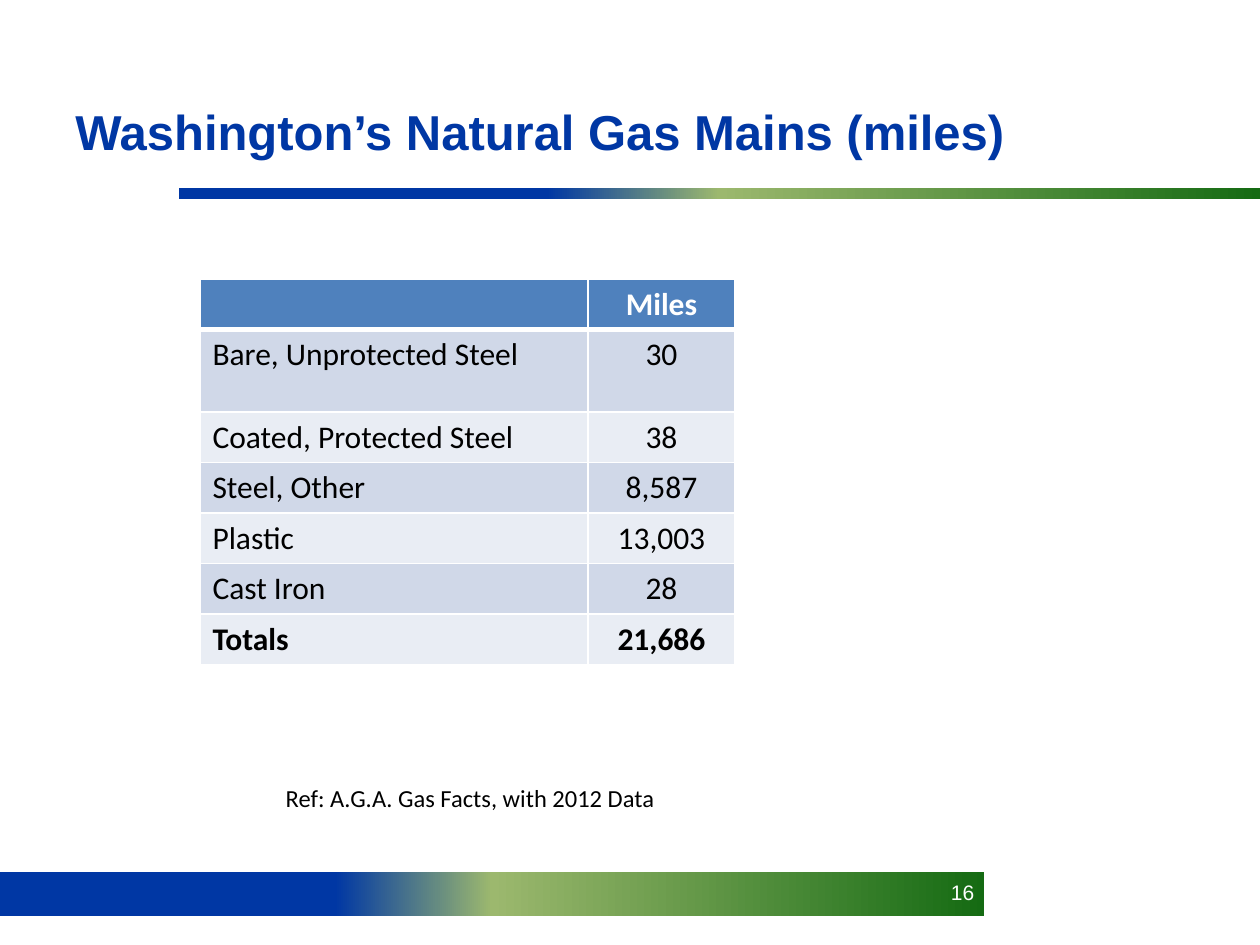
from copy import deepcopy

from lxml.etree import SubElement
from pptx import Presentation
from pptx.dml.color import RGBColor as Color
from pptx.enum.shapes import MSO_SHAPE as Shape
from pptx.enum.text import MSO_ANCHOR as Anchor, PP_ALIGN as Align
from pptx.oxml.ns import qn
from pptx.util import Cm, Pt

TITLE = "Washington’s Natural Gas Mains (miles)"
REFERENCE = "Ref: A.G.A. Gas Facts, with 2012 Data"
PAGE_NUMBER = "16"
MAINS = [
    ("", "Miles"),
    ("Bare, Unprotected Steel", "30"),
    ("Coated, Protected Steel", "38"),
    ("Steel, Other", "8,587"),
    ("Plastic", "13,003"),
    ("Cast Iron", "28"),
    ("Totals", "21,686"),
]

THEME = {
    "blue": "0037A4",
    "black": "000000",
    "white": "FFFFFF",
    "header": "4F81BD",
    "bands": ("D0D8E8", "E9EDF4"),
    "gradient": ((0.34, "0037A4"), (0.5, "9CB86E"), (1, "156B13")),
    "heading_font": "Arial",
    "body_font": "Calibri",
    "title_size": 28,
    "table_size": 18,
    "reference_size": 14,
    "number_size": 12,
}

SLIDE_SIZE = (25.4, 19.05)
BARS = [(0, 17.58, 19.84, 0.88), (3.61, 3.8, 21.79, 0.22)]
TITLE_BOX = (1.27, 1.32, 22.86, 2.62)
NUMBER_BOX = (13.97, 17.6, 5.92, 1.07)
REFERENCE_BOX = (5.51, 15.67, 8.13, 0.86)
TABLE_ORIGIN = (4.03, 5.62)
COLUMN_WIDTHS = (7.82, 2.97)
ROW_HEIGHT, TALL_ROW_HEIGHT, TALL_ROW = 1.0, 1.67, 1
THIN, THICK = 1, 3


def place(box):
    return [Cm(value) for value in box]


def style_text(text_frame, text, font, size, color, bold=False, align=Align.LEFT):
    text_frame.text = text
    paragraph = text_frame.paragraphs[0]
    paragraph.alignment = align
    for styled in [paragraph, *paragraph.runs]:
        styled.font.name = THEME[font]
        styled.font.size = Pt(THEME[size])
        styled.font.bold = bold
        styled.font.color.rgb = Color.from_string(THEME[color])


def add_text(slide, box, *style, anchor=Anchor.TOP, wrap=True, **options):
    text_frame = slide.shapes.add_textbox(*place(box)).text_frame
    text_frame.word_wrap = wrap
    text_frame.vertical_anchor = anchor
    style_text(text_frame, *style, **options)


def add_gradient_bar(slide, box):
    shape = slide.shapes.add_shape(Shape.RECTANGLE, *place(box))
    shape.shadow.inherit = False
    shape.line.fill.background()
    shape.fill.gradient()
    shape.fill.gradient_angle = 0
    stop_list = shape.element.spPr.find(qn("a:gradFill")).find(qn("a:gsLst"))
    stop_list.append(deepcopy(stop_list[-1]))
    for stop, (position, color) in zip(shape.fill.gradient_stops, THEME["gradient"]):
        stop.position = position
        stop.color.rgb = Color.from_string(color)


def set_borders(cell, top, bottom):
    properties = cell._tc.get_or_add_tcPr()
    for side, width in (("L", THIN), ("R", THIN), ("T", top), ("B", bottom)):
        line = SubElement(properties, qn(f"a:ln{side}"), w=str(Pt(width)))
        fill = SubElement(line, qn("a:solidFill"))
        SubElement(fill, qn("a:srgbClr"), val=THEME["white"])


def add_mains_table(slide):
    heights = [TALL_ROW_HEIGHT if i == TALL_ROW else ROW_HEIGHT for i in range(len(MAINS))]
    box = (*TABLE_ORIGIN, sum(COLUMN_WIDTHS), sum(heights))
    table = slide.shapes.add_table(len(MAINS), len(COLUMN_WIDTHS), *place(box)).table
    for column, width in zip(table.columns, COLUMN_WIDTHS):
        column.width = Cm(width)
    for i, (values, height) in enumerate(zip(MAINS, heights)):
        table.rows[i].height = Cm(height)
        is_header = i == 0
        is_total = i == len(MAINS) - 1
        color = THEME["header"] if is_header else THEME["bands"][(i - 1) % 2]
        for j, value in enumerate(values):
            cell = table.cell(i, j)
            set_borders(cell, THICK if i == 1 else THIN, THICK if is_header else THIN)
            cell.fill.solid()
            cell.fill.fore_color.rgb = Color.from_string(color)
            style_text(cell.text_frame, value, "body_font", "table_size",
                       "white" if is_header else "black",
                       bold=is_header or is_total,
                       align=Align.CENTER if j else Align.LEFT)


def main():
    presentation = Presentation()
    presentation.slide_width, presentation.slide_height = place(SLIDE_SIZE)
    slide = presentation.slides.add_slide(presentation.slide_layouts[6])
    for bar in BARS:
        add_gradient_bar(slide, bar)
    add_text(slide, NUMBER_BOX, PAGE_NUMBER, "heading_font", "number_size", "white",
             align=Align.RIGHT)
    add_text(slide, TITLE_BOX, TITLE, "heading_font", "title_size", "blue",
             bold=True, anchor=Anchor.MIDDLE)
    add_mains_table(slide)
    add_text(slide, REFERENCE_BOX, REFERENCE, "body_font", "reference_size", "black",
             wrap=False)
    presentation.save("out.pptx")


if __name__ == "__main__":
    main()
